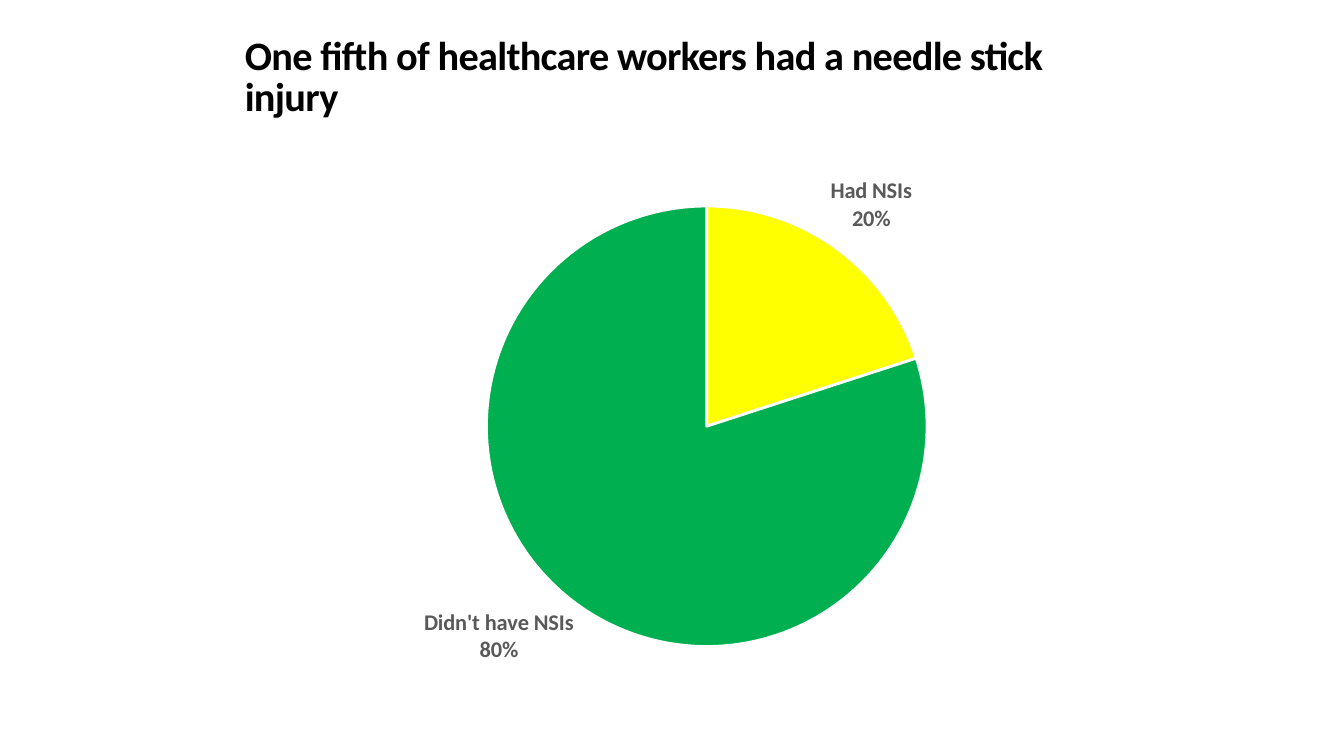
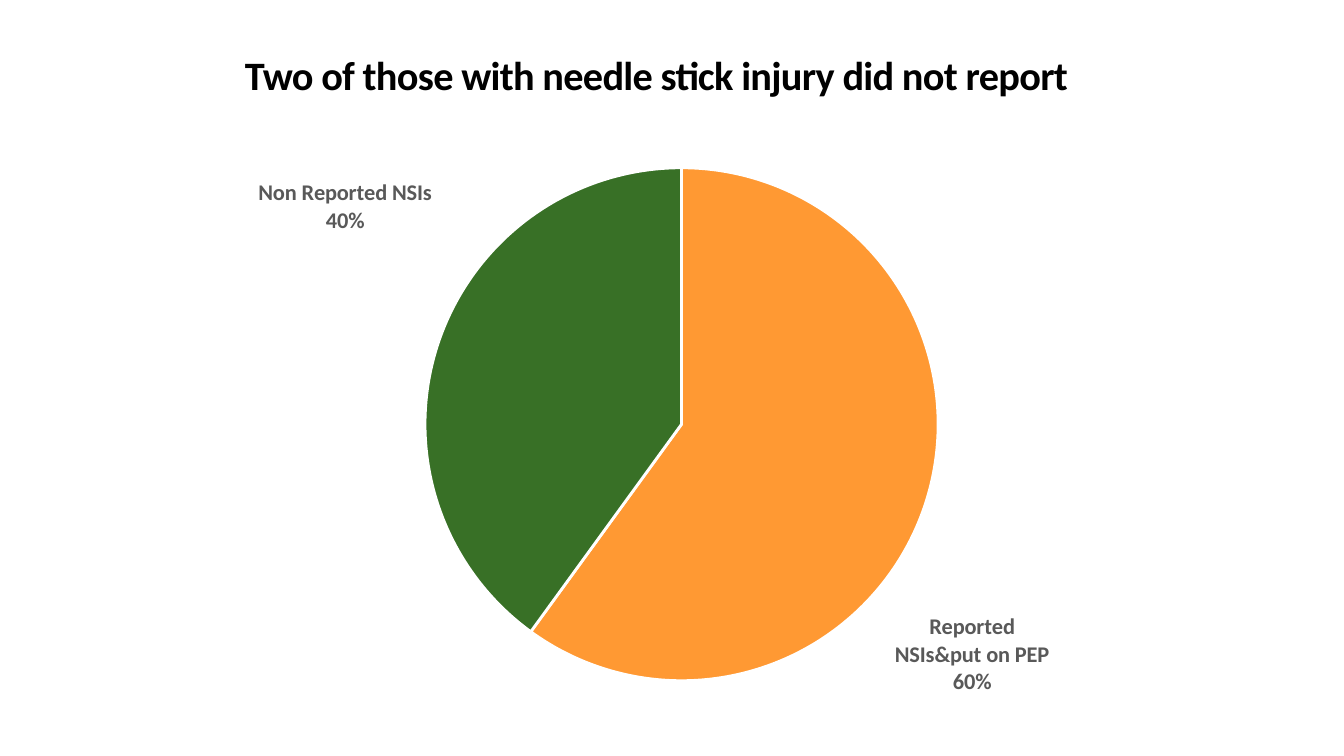
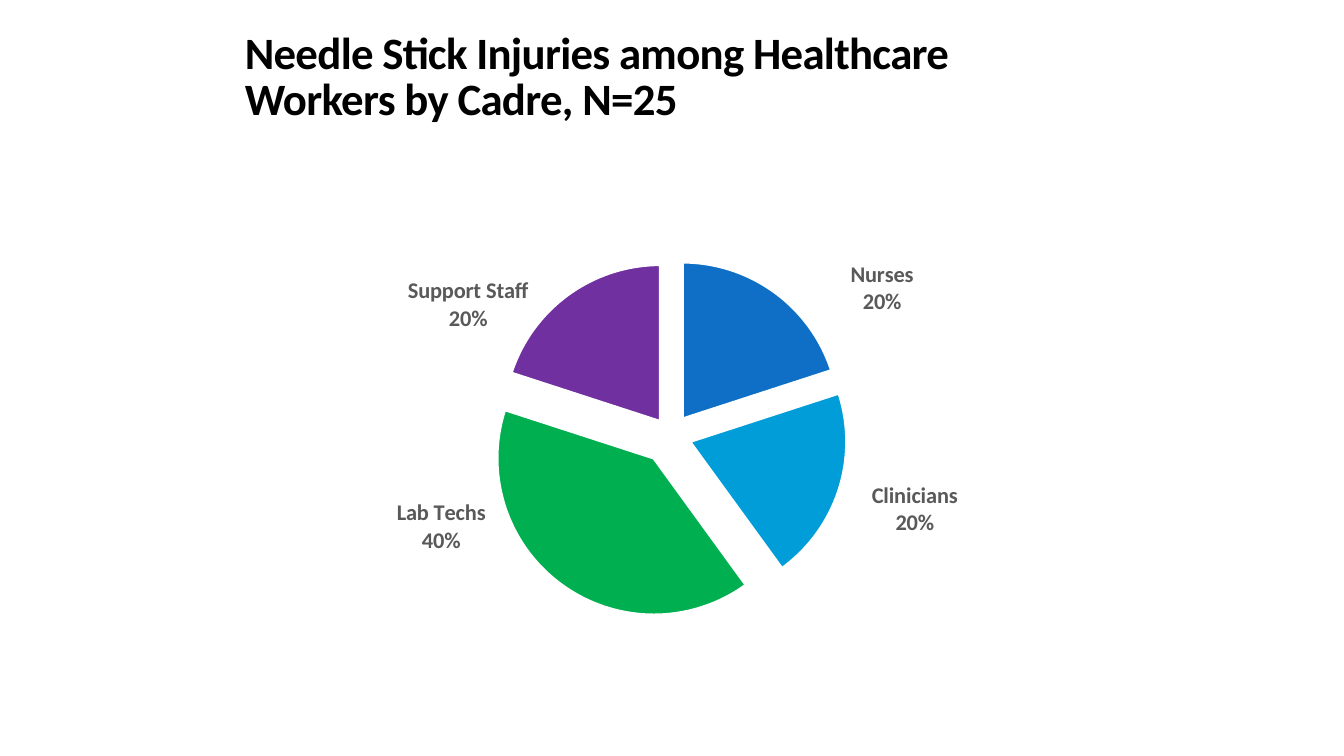
from dataclasses import dataclass

from pptx import Presentation
from pptx.chart.data import CategoryChartData
from pptx.dml.color import RGBColor
from pptx.enum.chart import XL_CHART_TYPE as ChartType, XL_LABEL_POSITION as LabelPosition
from pptx.enum.text import MSO_ANCHOR as Anchor
from pptx.oxml.xmlchemy import OxmlElement
from pptx.util import Inches, Pt

FONT = "Calibri"
BLACK = RGBColor(0x00, 0x00, 0x00)
WHITE = RGBColor(0xFF, 0xFF, 0xFF)
GREY = RGBColor(0x59, 0x59, 0x59)
YELLOW = RGBColor(0xFF, 0xFF, 0x00)
GREEN = RGBColor(0x00, 0xB0, 0x50)
ORANGE = RGBColor(0xFF, 0x99, 0x33)
DARK_GREEN = RGBColor(0x38, 0x70, 0x26)
BLUE = RGBColor(0x0F, 0x6F, 0xC6)
SKY = RGBColor(0x00, 0x9D, 0xD9)
PURPLE = RGBColor(0x70, 0x30, 0xA0)

# Boxes: left, top, width, height in inches
TITLE_BOX = (2.33, 0.3, 8.5, 0.96)
CHART_BOX = (2.17, 1.53, 9, 5.39)
CADRE_BOX = (2.17, 2, 9, 4.7)


@dataclass
class Slice:
    category: str
    percent: int
    color: RGBColor
    label_shift: tuple = (0, 0)  # fractions of the chart's width and height
    explosion: int = 0


def style_font(font, size, color, bold=False):
    font.name, font.size, font.bold = FONT, Pt(size), bold
    font.color.rgb = color


def add_text(slide, text, box, *, size, color=BLACK, bold=True, line_spacing=0.85, tracking=-50):
    frame = slide.shapes.add_textbox(*map(Inches, box)).text_frame
    frame.word_wrap = True
    frame.vertical_anchor = Anchor.MIDDLE
    paragraph = frame.paragraphs[0]
    paragraph.line_spacing = line_spacing
    run = paragraph.add_run()
    run.text = text
    style_font(run.font, size, color, bold)
    run.font._element.set("spc", str(tracking))


def chart_node(tag, value=None):
    node = OxmlElement(f"c:{tag}")
    if value is not None:
        node.set("val", str(value))
    return node


def manual_layout(**settings):
    layout, manual = chart_node("layout"), chart_node("manualLayout")
    layout.append(manual)
    for tag, value in settings.items():
        manual.append(chart_node(tag, value))
    return layout


def show_category_and_percent(labels):
    """Show the category above the percentage, without leader lines."""
    for tag, shown in (("showVal", 0), ("showCatName", 1), ("showPercent", 1)):
        labels.xpath(f"./c:{tag}")[0].set("val", str(shown))
    for leader in labels.xpath("./c:showLeaderLines"):
        leader.set("val", "0")
    separator = chart_node("separator")
    separator.text = "\n"
    labels.xpath("./c:showBubbleSize")[0].addnext(separator)


def style_slice(series, index, part):
    point = series.points[index]
    point.format.fill.solid()
    point.format.fill.fore_color.rgb = part.color
    point.format.line.color.rgb = WHITE
    point.format.line.width = Pt(2)
    if part.explosion:
        shape_props = series._element.xpath(f"./c:dPt[c:idx/@val={index}]/c:spPr")[0]
        shape_props.addprevious(chart_node("explosion", part.explosion))
    if any(part.label_shift):
        style_font(point.data_label.font, 16, GREY, True)
        point.data_label.position = LabelPosition.OUTSIDE_END
        label = series._element.xpath(f"./c:dLbls/c:dLbl[c:idx/@val={index}]")[0]
        x, y = part.label_shift
        label.xpath("./c:idx")[0].addnext(manual_layout(x=x, y=y))
        show_category_and_percent(label)


def add_pie(slide, slices, box, center, diameter):
    """Place a pie; center and diameter are inches from the box's corner."""
    data = CategoryChartData()
    data.categories = [part.category for part in slices]
    data.add_series("Series 1", [part.percent for part in slices])
    chart = slide.shapes.add_chart(ChartType.PIE, *map(Inches, box), data).chart
    chart.has_title = chart.has_legend = False
    style_font(chart.font, 10, BLACK)

    # Plot area
    width, height = box[2:]
    plot_area = chart._chartSpace.xpath("./c:chart/c:plotArea")[0]
    for old_layout in plot_area.xpath("./c:layout"):
        plot_area.remove(old_layout)
    plot_area.insert(0, manual_layout(
        layoutTarget="inner", xMode="edge", yMode="edge",
        x=round((center[0] - diameter / 2) / width, 4),
        y=round((center[1] - diameter / 2) / height, 4),
        w=round(diameter / width, 4), h=round(diameter / height, 4)))

    # Labels and slices
    plot = chart.plots[0]
    plot.vary_by_categories = True
    series = plot.series[0]
    labels = series.data_labels
    style_font(labels.font, 16, GREY, True)
    labels.position = LabelPosition.OUTSIDE_END
    show_category_and_percent(labels._element)
    for index, part in enumerate(slices):
        style_slice(series, index, part)


def add_pie_slide(deck, title, slices, *, center, diameter, box=CHART_BOX, title_size=28.8):
    slide = deck.slides.add_slide(deck.slide_layouts[6])
    add_text(slide, title, TITLE_BOX, size=title_size)
    add_pie(slide, slices, box, center, diameter)


def main():
    deck = Presentation()
    deck.slide_width, deck.slide_height = Inches(13.33), Inches(7.5)

    add_pie_slide(
        deck, "One fifth of healthcare workers had a needle stick injury",
        [Slice("Had NSIs", 20, YELLOW, (-0.01, -0.02)),
         Slice("Didn't have NSIs", 80, GREEN)],
        center=(4.84, 2.7), diameter=4.37)

    add_pie_slide(
        deck, "Two of those with needle stick injury did not report",
        [Slice("Reported NSIs&put on PEP", 60, ORANGE, (-0.04, 0.2)),
         Slice("Non Reported NSIs", 40, DARK_GREEN, (0, -0.2))],
        center=(4.59, 2.68), diameter=5.09)

    add_pie_slide(
        deck, "Needle Stick Injuries among Healthcare Workers by Cadre, N=25",
        [Slice("Nurses", 20, BLUE, (0.08, 0.06), 13),
         Slice("Clinicians", 20, SKY, (0.03, -0.02), 13),
         Slice("Lab Techs", 40, GREEN, (-0.08, -0.19), 18),
         Slice("Support Staff", 20, PURPLE, (-0.04, 0.09), 11)],
        center=(4.48, 2.32), diameter=3.11, box=CADRE_BOX, title_size=32)

    deck.save("out.pptx")


if __name__ == "__main__":
    main()
